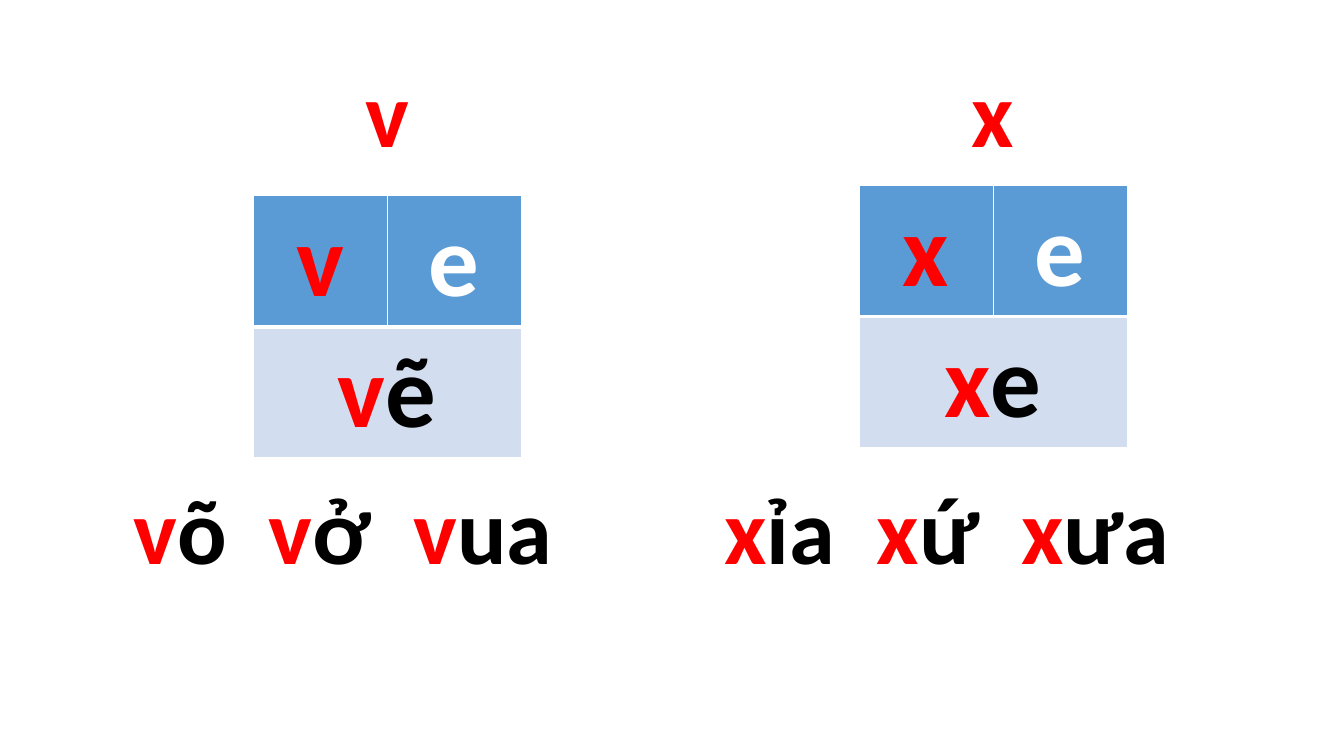
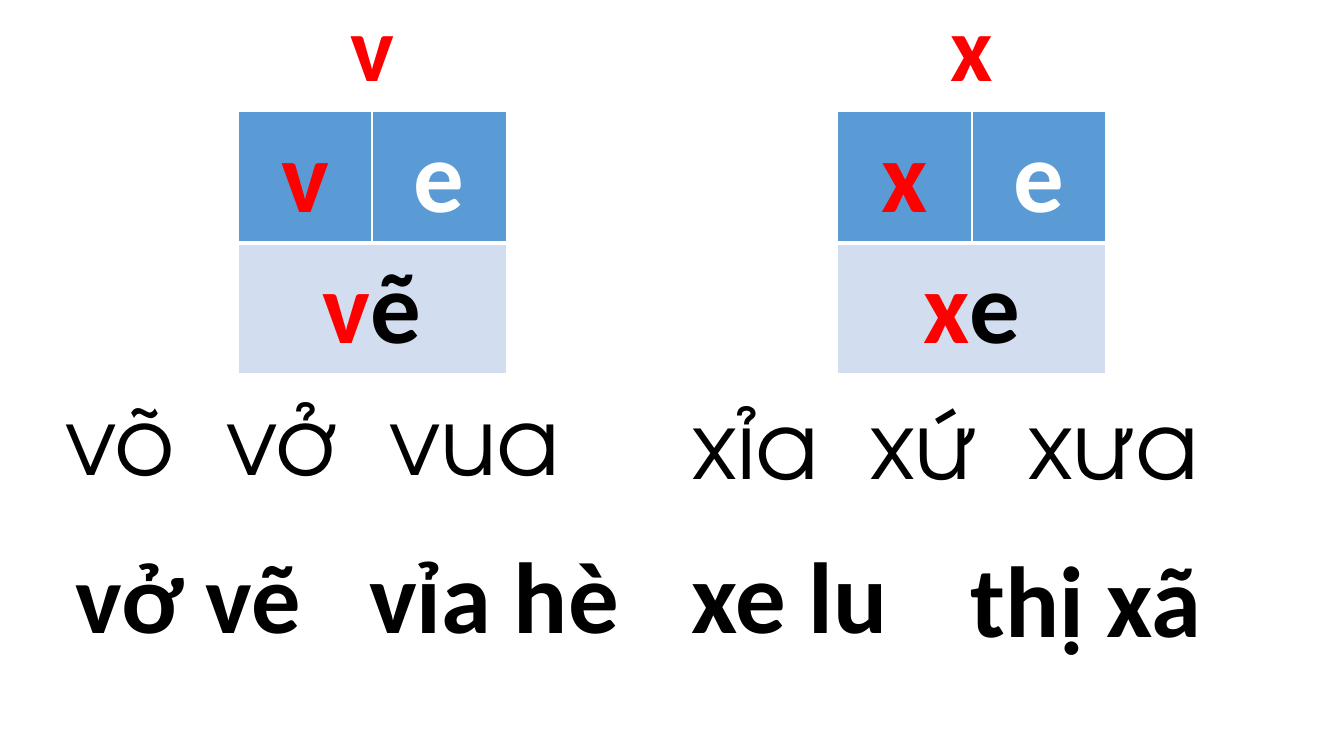
from pptx import Presentation
from pptx.dml.color import RGBColor
from pptx.enum.text import MSO_ANCHOR, PP_ALIGN
from pptx.oxml import parse_xml
from pptx.oxml.ns import nsdecls
from pptx.util import Inches, Pt

COLORS = {
    "accent": "FF0000",
    "ink": "000000",
    "white": "FFFFFF",
    "header": "5B9BD5",
    "body": "D2DEEF",
}
BODY_FONT = "Calibri"
WORD_FONT = "TeX Gyre Adventor"
SPACE_EM = {BODY_FONT: 0.23, WORD_FONT: 0.28}
CELL_WIDTH, CELL_HEIGHT = 1.33, 1.3

LESSONS = [
    {"letter": "v", "vowel": "e", "syllable": "vẽ", "words": ["võ", "vở", "vua"]},
    {"letter": "x", "vowel": "e", "syllable": "xe", "words": ["xỉa", "xứ", "xưa"]},
]
PAGES = [
    {
        "letter_bottom": 1.67,
        "table_centers": [3.84, 9.85],
        "table_tops": [1.94, 1.84],
        "word_centers": [3.4, 9.39],
        "word_bottoms": [5.8, 5.8],
        "word_format": {"accent": True, "bold": True},
        "phrases": [],
    },
    {
        "letter_bottom": 1.01,
        "table_centers": [3.69, 9.64],
        "table_tops": [1.11, 1.11],
        "word_centers": [3.1, 9.38],
        "word_bottoms": [4.92, 4.96],
        "word_format": {"font": WORD_FONT, "bold": False},
        "phrases": [
            ("vở vẽ", 1.87, 6.54, 70.2),
            ("vỉa hè", 4.9, 6.55, 72),
            ("xe lu", 7.83, 6.55, 72),
            ("thị xã", 10.77, 6.59, 72),
        ],
    },
]


def rgb(name):
    return RGBColor.from_string(COLORS[name])


def write(frame, words, size=66, font=BODY_FONT, bold=True, color="ink",
          accent=False, spacing=None):
    paragraph = frame.paragraphs[0]
    paragraph.alignment = PP_ALIGN.CENTER
    paragraph.line_spacing = spacing

    def add_run(text, run_color):
        run = paragraph.add_run()
        run.text = text
        run.font.name = font
        run.font.size = Pt(size)
        run.font.bold = bold
        run.font.color.rgb = rgb(run_color)
        return run

    for index, word in enumerate(words):
        if index:
            gap = add_run(" ", color)
            gap.font._element.set("spc", str(round(SPACE_EM[font] * size * 100)))
        if accent:
            add_run(word[0], "accent")
            word = word[1:]
        if word:
            add_run(word, color)


def add_line_of_text(slide, words, center, bottom, width, height, **style):
    box = slide.shapes.add_textbox(
        Inches(center - width / 2), Inches(bottom - height), Inches(width), Inches(height))
    frame = box.text_frame
    frame.word_wrap = True
    frame.vertical_anchor = MSO_ANCHOR.BOTTOM
    write(frame, words, **style)


def set_borders(cell, widths):
    properties = cell._tc.get_or_add_tcPr()
    for position, (side, points) in enumerate(widths.items()):
        properties.insert(position, parse_xml(
            f'<a:ln{side} {nsdecls("a")} w="{Pt(points)}"><a:solidFill>'
            f'<a:srgbClr val="{COLORS["white"]}"/></a:solidFill></a:ln{side}>'))


def add_syllable_table(slide, lesson, center, top):
    table = slide.shapes.add_table(
        2, 2, Inches(center - CELL_WIDTH), Inches(top),
        Inches(2 * CELL_WIDTH), Inches(2 * CELL_HEIGHT)).table
    for column in table.columns:
        column.width = Inches(CELL_WIDTH)
    for row_index, fill in enumerate(("header", "body")):
        for column_index in range(2):
            cell = table.cell(row_index, column_index)
            cell.fill.solid()
            cell.fill.fore_color.rgb = rgb(fill)
            set_borders(cell, {"L": 1, "R": 1, "T": 1 + 2 * row_index, "B": 3 - 2 * row_index})
    table.cell(1, 0).merge(table.cell(1, 1))
    write(table.cell(0, 0).text_frame, [lesson["letter"]], size=72, accent=True)
    write(table.cell(0, 1).text_frame, [lesson["vowel"]], size=72, color="white")
    write(table.cell(1, 0).text_frame, [lesson["syllable"]], size=72, accent=True)


def add_page(deck, page):
    slide = deck.slides.add_slide(deck.slide_layouts[6])
    for index, lesson in enumerate(LESSONS):
        center = page["table_centers"][index]
        add_line_of_text(slide, [lesson["letter"]], center, page["letter_bottom"],
                         5.3, 1, accent=True, spacing=0.7)
        add_syllable_table(slide, lesson, center, page["table_tops"][index])
        add_line_of_text(slide, lesson["words"], page["word_centers"][index],
                         page["word_bottoms"][index], 5.8, 1.2, spacing=0.7,
                         **page["word_format"])
    for phrase, center, bottom, size in page["phrases"]:
        add_line_of_text(slide, [phrase], center, bottom, 3, 1.3, size=size, spacing=0.9)


def main():
    deck = Presentation()
    deck.slide_width = Inches(13.33)
    deck.slide_height = Inches(7.5)
    for page in PAGES:
        add_page(deck, page)
    deck.save("out.pptx")


if __name__ == "__main__":
    main()
